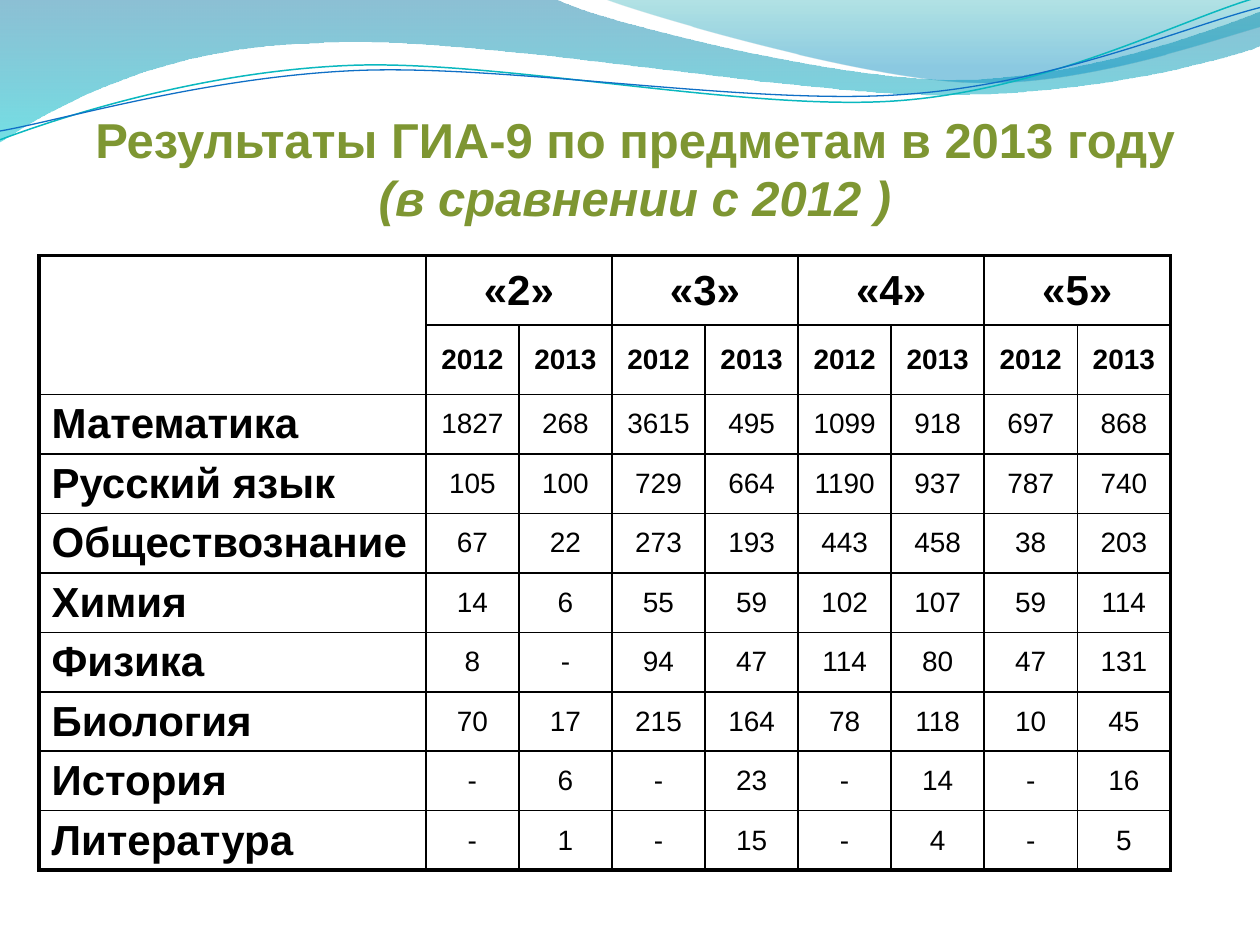
import copy
import pptx
import pptx.util
import pptx.dml.color
import pptx.enum.text
import pptx.oxml
import pptx.oxml.ns

COLS, ROWS = 10, 7.5
CENTER = pptx.enum.text.PP_ALIGN.CENTER
LEFT = pptx.enum.text.PP_ALIGN.LEFT
MIDDLE = pptx.enum.text.MSO_ANCHOR.MIDDLE
BOTTOM = pptx.enum.text.MSO_ANCHOR.BOTTOM
qn = pptx.oxml.ns.qn
NS = pptx.oxml.ns.nsdecls("a")

MARKS = ["«2»", "«3»", "«4»", "«5»"]
YEARS = ["2012", "2013"]
RESULTS = {
    "Математика": "1827 268 3615 495 1099 918 697 868",
    "Русский язык": "105 100 729 664 1190 937 787 740",
    "Обществознание": "67 22 273 193 443 458 38 203",
    "Химия": "14 6 55 59 102 107 59 114",
    "Физика": "8 - 94 47 114 80 47 131",
    "Биология": "70 17 215 164 78 118 10 45",
    "История": "- 6 - 23 - 14 - 16",
    "Литература": "- 1 - 15 - 4 - 5",
}
BANDS = [
    ([(0, 0), (4.4, -0.01), (4.76, 0.17, 6.64, 0.63, 7.58, 0.63),
      (8.53, 0.63, 9.58, 0.26, 10, 0.09), (10.01, 0.36),
      (9.83, 0.44, 8.7, 0.76, 7.46, 0.75), (6.22, 0.75, 3.82, 0.28, 2.57, 0.34),
      (1.29, 0.36, 0.46, 0.83, -0.01, 1.13), (0, 0)],
     [(0, "0074A1", 45), (1, "00C6CF", 55)]),
    ([(4.79, -0.01), (5.09, 0.11, 6.82, 0.62, 7.69, 0.65),
      (8.56, 0.69, 9.61, 0.32, 10, 0.21), (10, 0), (4.79, -0.01)],
     [(0, "00A1A9", 30), (0.8, "008BBF", 45)]),
]
WAVES = [
    ([(0, 1.11), (0.48, 0.93, 1.58, 0.57, 2.77, 0.52),
      (3.95, 0.47, 5.93, 0.89, 7.13, 0.8), (8.33, 0.71, 9.38, 0.15, 9.98, -0.02)],
     "0AB8BF", 0.85),
    ([(0, 1.04), (0.47, 0.96, 1.64, 0.61, 2.83, 0.56),
      (4.03, 0.51, 5.97, 0.84, 7.17, 0.75), (8.36, 0.67, 9.41, 0.21, 10, 0.06)],
     "0F6FC6", 0.75),
]


def rgb(value):
    return pptx.dml.color.RGBColor.from_string(value)


class Deck:
    font = "Arial"
    ink = "000000"
    accent = "7E9632"
    thin, thick = 1, 2.25

    def __init__(self):
        self.prs = pptx.Presentation()
        self.prs.slide_width = pptx.util.Inches(10)
        self.prs.slide_height = pptx.util.Inches(7.5)
        self.slide = self.prs.slides.add_slide(self.prs.slide_layouts[5])

    def x(self, cols):
        return round(self.prs.slide_width * cols / COLS)

    def y(self, rows):
        return round(self.prs.slide_height * rows / ROWS)

    def box(self, left, top, width, height):
        return self.x(left), self.y(top), self.x(width), self.y(height)

    def run(self, p, text, color, **fmt):
        r = p.add_run()
        r.text = text
        for name, value in {"name": self.font, **fmt}.items():
            setattr(r.font, name, value)
        r.font.color.rgb = rgb(color)
        return r

    def outline(self, path, close):
        ends = [(self.x(seg[-2]), self.y(seg[-1])) for seg in path]
        fb = self.slide.shapes.build_freeform(*ends[0])
        fb.add_line_segments(ends[1:], close=close)
        sp = fb.convert_to_shape()
        sp.shadow.inherit = False
        lines = list(sp._element.iter(qn("a:lnTo")))
        for line, seg in zip(lines, path[1:]):
            if len(seg) == 6:
                pts = "".join(
                    f'<a:pt x="{self.x(a) - sp.left}" y="{self.y(b) - sp.top}"/>'
                    for a, b in zip(seg[::2], seg[1::2]))
                curve = pptx.oxml.parse_xml(
                    f'<a:cubicBezTo {NS}>{pts}</a:cubicBezTo>')
                line.getparent().replace(line, curve)
        return sp

    def band(self, path, stops):
        sp = self.outline(path, True)
        sp.line.fill.background()
        sp.fill.gradient()
        sp.fill.gradient_angle = 270
        for stop, (pos, color, _) in zip(sp.fill.gradient_stops, stops):
            stop.position = pos
            stop.color.rgb = rgb(color)
        for clr, (_, _, opacity) in zip(sp._element.spPr.iter(qn("a:srgbClr")), stops):
            clr.append(pptx.oxml.parse_xml(f'<a:alpha {NS} val="{opacity * 1000}"/>'))

    def wave(self, path, color, width):
        sp = self.outline(path, False)
        sp.fill.background()
        sp.line.color.rgb = rgb(color)
        sp.line.width = pptx.util.Pt(width)

    def title(self, box, main, note):
        sp = self.slide.shapes.title
        sp._element.getparent().append(sp._element)
        sp.left, sp.top, sp.width, sp.height = self.box(*box)
        tf = sp.text_frame
        frame = {"margin_left": 0, "margin_right": 0, "margin_bottom": 0,
                 "vertical_anchor": BOTTOM, "word_wrap": True}
        for name, value in frame.items():
            setattr(tf, name, value)
        p = tf.paragraphs[0]
        p.alignment = CENTER
        fmt = {"size": pptx.util.Pt(28), "bold": True}
        r = self.run(p, main, self.accent, **fmt)
        p.add_line_break()
        p._p.find(qn("a:br")).append(copy.deepcopy(r.font._element))
        self.run(p, note, self.accent, italic=True, **fmt)

    def table(self, box, widths, heights):
        shape = self.slide.shapes.add_table(len(heights), len(widths), *self.box(*box))
        tbl = shape.table
        tbl.first_row = tbl.horz_banding = False
        for col, width in zip(tbl.columns, widths):
            col.width = self.x(width)
        for row, height in zip(tbl.rows, heights):
            row.height = self.y(height)
        return tbl

    def borders(self, tbl):
        rows, cols = len(tbl.rows), len(tbl.columns)
        for i in range(rows):
            for j in range(cols):
                cell = tbl.cell(i, j)
                right = j + (cell.span_width if cell.is_merge_origin else 1)
                edges = {"L": j == 0, "R": right == cols,
                         "T": i == 0, "B": i == rows - 1}
                tcPr = cell._tc.get_or_add_tcPr()
                for side, outer in edges.items():
                    width = pptx.util.Pt(self.thick if outer else self.thin)
                    tcPr.append(pptx.oxml.parse_xml(
                        f'<a:ln{side} {NS} w="{width}"><a:solidFill><a:srgbClr '
                        f'val="{self.ink}"/></a:solidFill></a:ln{side}>'))
                cell.fill.background()

    def cell(self, cell, text, size, bold=False, align=CENTER):
        cell.vertical_anchor = MIDDLE
        p = cell.text_frame.paragraphs[0]
        p.alignment = align
        self.run(p, text, self.ink, size=pptx.util.Pt(size), bold=bold)


def main():
    deck = Deck()
    for band in BANDS:
        deck.band(*band)
    for wave in WAVES:
        deck.wave(*wave)
    deck.title((0.5, 0.77, 9.08, 1.03),
               "Результаты ГИА-9 по предметам в 2013 году", "(в сравнении с 2012 )")

    width, subject_width = 8.98, 3.07
    count_cols = len(MARKS) * len(YEARS)
    widths = [subject_width] + [(width - subject_width) / count_cols] * count_cols
    heights = [0.55] * 2 + [0.47] * len(RESULTS)
    tbl = deck.table((0.31, 2.03, width, sum(heights)), widths, heights)
    tbl.cell(0, 0).merge(tbl.cell(1, 0))
    for m, mark in enumerate(MARKS):
        first = 1 + m * len(YEARS)
        tbl.cell(0, first).merge(tbl.cell(0, first + 1))
        deck.cell(tbl.cell(0, first), mark, 24, True)
        for k, year in enumerate(YEARS):
            deck.cell(tbl.cell(1, first + k), year, 16, True)
    for i, (subject, counts) in enumerate(RESULTS.items(), 2):
        deck.cell(tbl.cell(i, 0), subject, 24, True, LEFT)
        for j, count in enumerate(counts.split(), 1):
            deck.cell(tbl.cell(i, j), count, 16)
    deck.borders(tbl)
    deck.prs.save("out.pptx")


if __name__ == "__main__":
    main()
